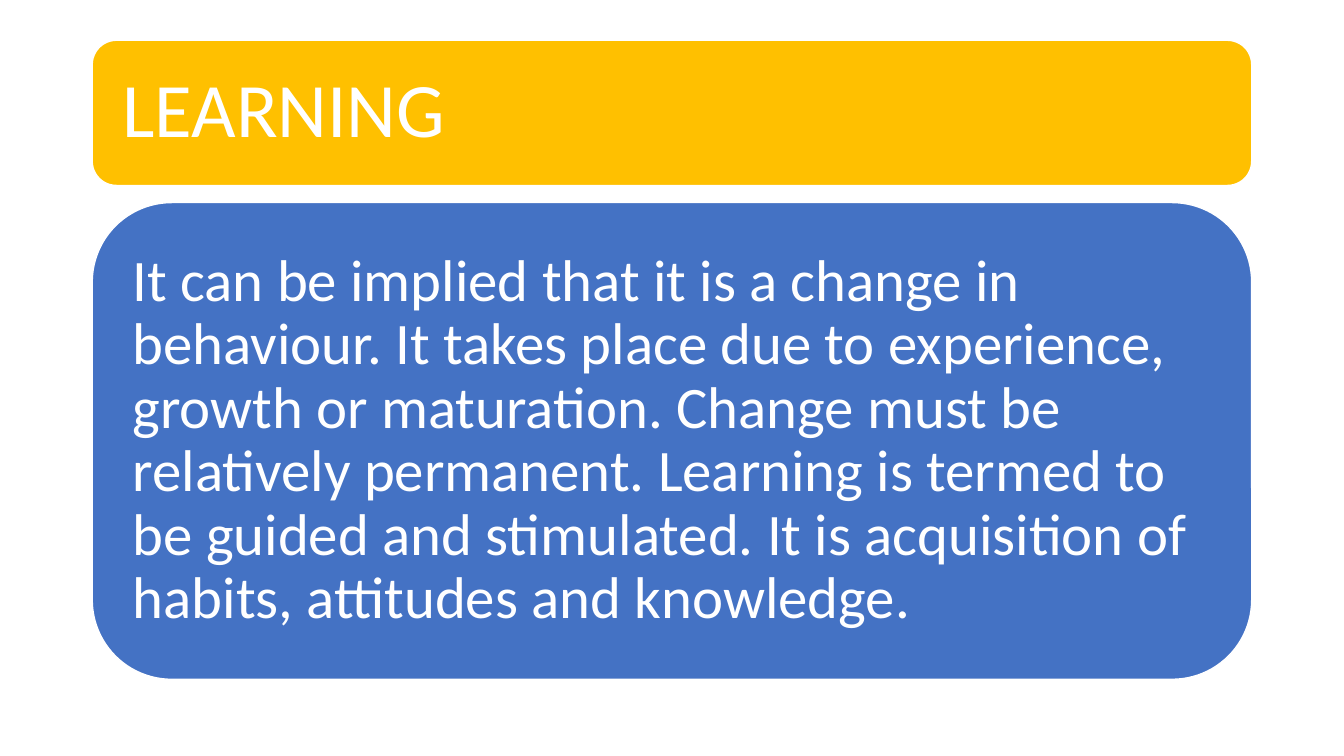
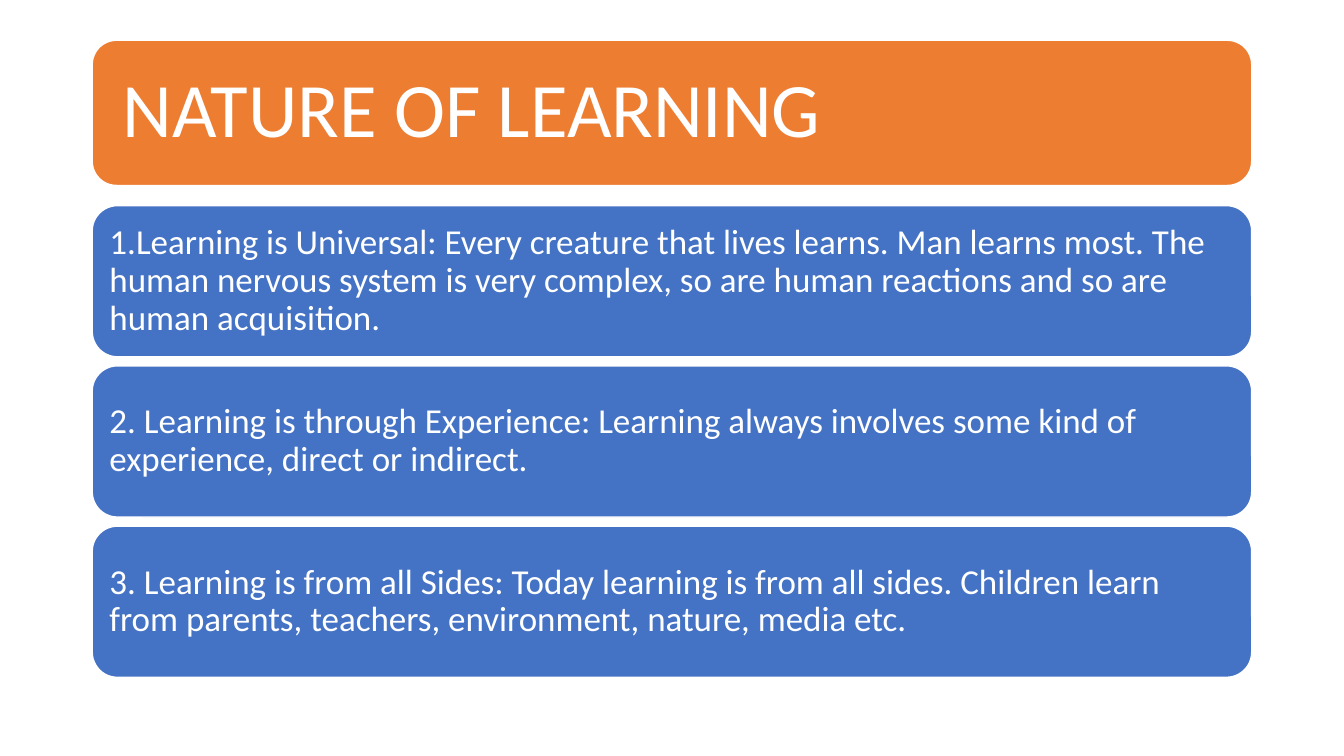
"""Build two slides on learning, each a title band above rounded text panels."""
from pptx import Presentation
from pptx.dml.color import RGBColor
from pptx.enum.shapes import MSO_SHAPE as Shape
from pptx.enum.text import MSO_ANCHOR as Anchor, PP_ALIGN as Align
from pptx.util import Inches, Pt

WHITE, GOLD, ORANGE, BLUE = "FFFFFF", "FFC000", "ED7D31", "4472C4"
FONT = "Calibri"
SLIDE_WIDTH, SLIDE_HEIGHT = 13.33, 7.5
BAND_WIDTH = 11.5
BAND_LEFT = (SLIDE_WIDTH - BAND_WIDTH) / 2
TITLE = {"top": 0.4, "height": 1.44, "size": 55, "inset": 0.23}
PANEL_GAP = 0.09

SLIDES = [
    {
        "title": "LEARNING",
        "color": GOLD,
        "panel": {"top": 2.01, "height": 4.73, "size": 42, "inset": 0.17},
        "texts": [
            "It can be implied that it is a change in behaviour. It takes place due to "
            "experience, growth or maturation. Change must be relatively permanent. "
            "Learning is termed to be guided and stimulated. It is acquisition of "
            "habits, attitudes and knowledge.",
        ],
    },
    {
        "title": "NATURE OF LEARNING",
        "color": ORANGE,
        "panel": {"top": 2.04, "height": 1.5, "size": 25, "inset": 0.1},
        "texts": [
            "1.Learning is Universal: Every creature that lives learns. Man learns most. "
            "The human nervous system is very complex, so are human reactions and so "
            "are human acquisition.",
            "2. Learning is through Experience: Learning always involves some kind of "
            "experience, direct or indirect.",
            "3. Learning is from all Sides: Today learning is from all sides. Children "
            "learn from parents, teachers, environment, nature, media etc.",
        ],
    },
]


def rgb(color):
    return RGBColor.from_string(color)


def add_band(slide, text, color, top, height, size, inset):
    shape = slide.shapes.add_shape(
        Shape.ROUNDED_RECTANGLE,
        Inches(BAND_LEFT), Inches(top), Inches(BAND_WIDTH), Inches(height),
    )
    shape.shadow.inherit = False
    shape.fill.solid()
    shape.fill.fore_color.rgb = rgb(color)
    shape.line.color.rgb = rgb(WHITE)
    shape.line.width = Pt(1)

    frame = shape.text_frame
    frame.word_wrap = True
    frame.vertical_anchor = Anchor.MIDDLE
    frame.margin_left = frame.margin_right = Inches(inset)
    frame.margin_top = frame.margin_bottom = Inches(inset)

    paragraph = frame.paragraphs[0]
    paragraph.text = text
    paragraph.alignment = Align.LEFT
    paragraph.line_spacing = 0.9
    paragraph.font.name = FONT
    paragraph.font.size = Pt(size)
    paragraph.font.color.rgb = rgb(WHITE)


def main():
    presentation = Presentation()
    presentation.slide_width = Inches(SLIDE_WIDTH)
    presentation.slide_height = Inches(SLIDE_HEIGHT)
    blank = presentation.slide_layouts[6]
    for content in SLIDES:
        slide = presentation.slides.add_slide(blank)
        add_band(slide, content["title"], content["color"], **TITLE)
        panel = content["panel"]
        for row, text in enumerate(content["texts"]):
            top = panel["top"] + row * (panel["height"] + PANEL_GAP)
            add_band(slide, text, BLUE, **{**panel, "top": top})
    presentation.save("out.pptx")


if __name__ == "__main__":
    main()
